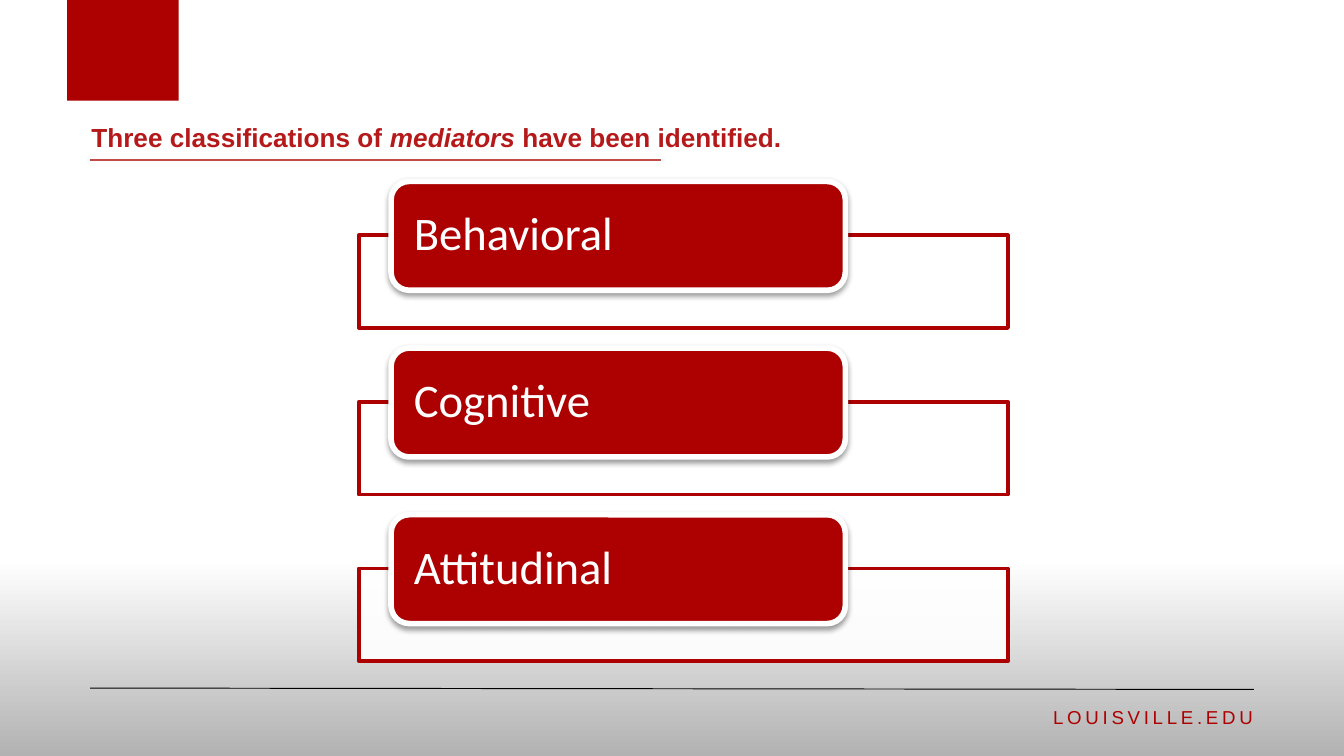
from lxml.etree import SubElement
from pptx import Presentation
from pptx.dml.color import RGBColor
from pptx.enum.shapes import MSO_CONNECTOR, MSO_SHAPE
from pptx.enum.text import MSO_ANCHOR, MSO_AUTO_SIZE, PP_ALIGN
from pptx.oxml.ns import qn
from pptx.util import Inches, Pt

COLORS = {
    "red": "AD0000",
    "title": "B5191A",
    "rule": "BF4C48",
    "black": "000000",
    "white": "FFFFFF",
    "gray": "B2B2B2",
}


def color(name):
    return RGBColor.from_string(COLORS[name])


class Deck:
    """Holds the style and the current slide."""

    def __init__(self, wide):
        self.file = Presentation()
        self.file.slide_width = Inches(wide)
        self.file.slide_height = Inches(wide * 9 / 16)
        self.slide = self.file.slides.add_slide(self.file.slide_layouts[5])
        self.shapes = self.slide.shapes

    def backdrop(self, stops):
        fill = self.slide.background.fill
        fill.gradient()
        fill.gradient_angle = 270
        for stop, (place, name) in zip(fill.gradient_stops, stops):
            stop.position = place
            stop.color.rgb = color(name)

    def place(self, shape, box):
        shape.left, shape.top, shape.width, shape.height = map(Inches, box)

    def run(self, para, text, size, name, face="Arial", bold=False, italic=False):
        run = para.add_run()
        run.text = text
        font = run.font
        font.size, font.name = Pt(size), face
        font.bold, font.italic = bold, italic
        font.color.rgb = color(name)
        return run

    def title(self, box, parts):
        shape = self.shapes.title
        self.place(shape, box)
        frame = shape.text_frame
        frame.word_wrap = True
        frame.auto_size = MSO_AUTO_SIZE.NONE
        frame.vertical_anchor = MSO_ANCHOR.BOTTOM
        para = frame.paragraphs[0]
        para.alignment = PP_ALIGN.LEFT
        for text, italic in parts:
            self.run(para, text, 14, "title", bold=True, italic=italic)

    def footer(self, box, text):
        frame = self.shapes.add_textbox(*map(Inches, box)).text_frame
        frame.word_wrap = True
        para = frame.paragraphs[0]
        para.alignment = PP_ALIGN.RIGHT
        run = self.run(para, text, 10, "red")
        run.font._element.set("spc", "200")

    def line(self, start, end, name, width):
        line = self.shapes.add_connector(
            MSO_CONNECTOR.STRAIGHT, *map(Inches, start + end))
        line.line.color.rgb = color(name)
        line.line.width = Pt(width)
        SubElement(line._element.spPr, qn("a:effectLst"))

    def block(self, kind, box, fill, edge=None, width=0):
        shape = self.shapes.add_shape(kind, *map(Inches, box))
        shape.shadow.inherit = False
        shape.fill.solid()
        shape.fill.fore_color.rgb = color(fill)
        if edge:
            shape.line.color.rgb = color(edge)
            shape.line.width = Pt(width)
        else:
            shape.line.fill.background()
        return shape

    def frame(self, box):
        shape = self.block(MSO_SHAPE.RECTANGLE, box, "white", "red", 2)
        tint = shape._element.spPr.find(qn("a:solidFill"))[0]
        SubElement(tint, qn("a:alpha"), val="90000")

    def label(self, box, text):
        shape = self.block(MSO_SHAPE.ROUNDED_RECTANGLE, box, "red", "white", 3)
        self.shade(shape)
        frame = shape.text_frame
        frame.word_wrap = True
        frame.vertical_anchor = MSO_ANCHOR.MIDDLE
        frame.margin_left = frame.margin_right = Inches(0.13)
        frame.margin_top = frame.margin_bottom = 0
        para = frame.paragraphs[0]
        para.alignment = PP_ALIGN.LEFT
        para.line_spacing = 0.9
        self.run(para, text, 25, "white", "Calibri")

    def shade(self, shape):
        """Add a soft shadow below the shape."""
        effects = shape._element.spPr.find(qn("a:effectLst"))
        outer = SubElement(
            effects, qn("a:outerShdw"), blurRad=str(Pt(3.1)),
            dist=str(Pt(1.6)), dir="5400000", rotWithShape="0")
        tint = SubElement(outer, qn("a:srgbClr"), val=COLORS["black"])
        SubElement(tint, qn("a:alpha"), val="38000")


def main():
    deck = Deck(10)
    deck.backdrop([(0.74, "white"), (1, "gray")])
    deck.line((9.33, 5.13), (0.67, 5.12), "black", 0.5)
    deck.footer((7.25, 5.2, 2.17, 0.3), "LOUISVILLE.EDU")
    deck.block(MSO_SHAPE.RECTANGLE, (0.5, 0, 0.83, 0.75), "red")
    deck.line((4.92, 1.19), (0.67, 1.19), "rule", 0.75)
    deck.title((0.58, 0.81, 5.42, 0.38), [
        ("Three classifications of ", False),
        ("mediators", True),
        (" have been identified.", False),
    ])
    for row, text in enumerate(["Behavioral", "Cognitive", "Attitudinal"]):
        top = 1.35 + row * 1.24
        deck.frame((2.67, top + 0.4, 4.83, 0.69))
        deck.label((2.91, top, 3.38, 0.81), text)
    deck.file.save("out.pptx")


if __name__ == "__main__":
    main()
